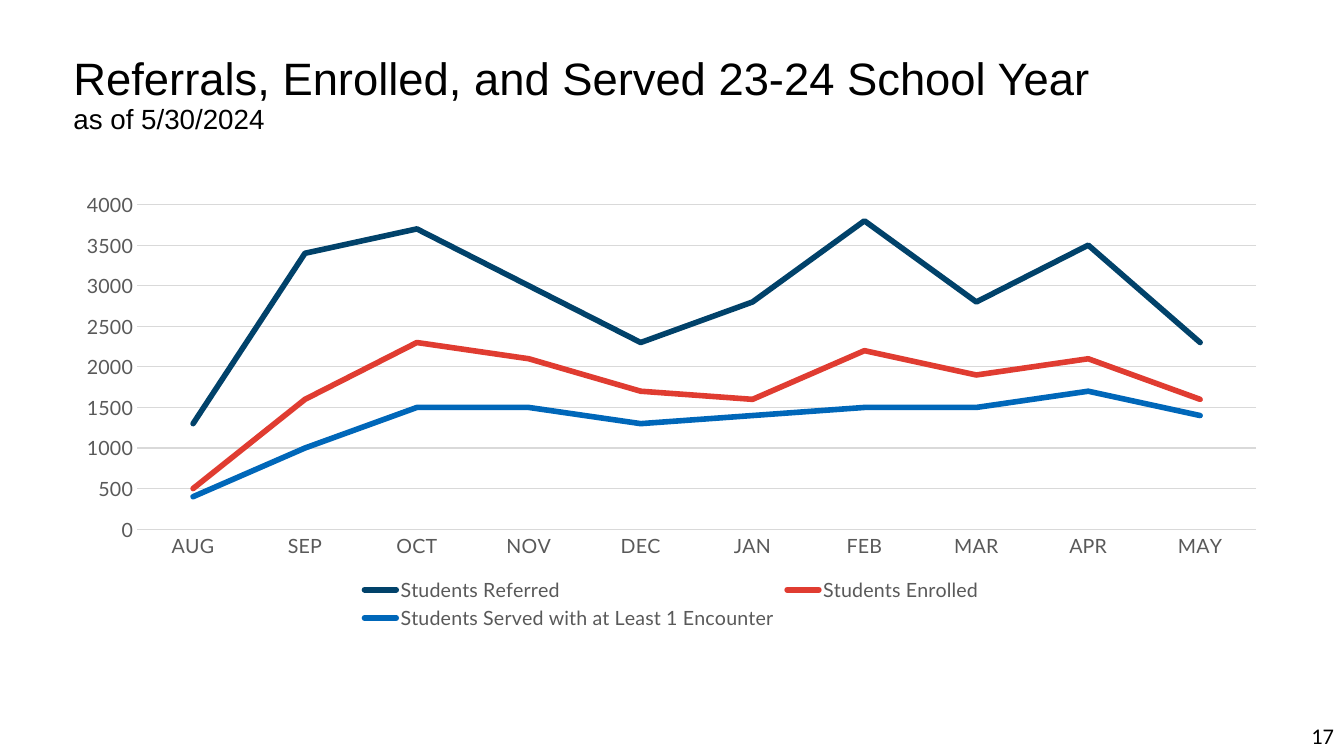
from pptx import Presentation
from pptx.chart.data import CategoryChartData
from pptx.dml.color import RGBColor
from pptx.enum.chart import XL_CHART_TYPE, XL_LEGEND_POSITION, XL_TICK_MARK
from pptx.enum.text import MSO_ANCHOR, PP_ALIGN
from pptx.util import Inches, Pt

BLACK = RGBColor(0x00, 0x00, 0x00)
GRAY = RGBColor(0x59, 0x59, 0x59)
GRID = RGBColor(0xD9, 0xD9, 0xD9)
NAVY = RGBColor(0x01, 0x42, 0x6A)
RED = RGBColor(0xE0, 0x3C, 0x31)
BLUE = RGBColor(0x00, 0x67, 0xB9)

MONTHS = ["AUG", "SEP", "OCT", "NOV", "DEC", "JAN", "FEB", "MAR", "APR", "MAY"]
SERIES = [
    ("Students Referred", NAVY,
     [1300, 3400, 3700, 3000, 2300, 2800, 3800, 2800, 3500, 2300]),
    ("Students Enrolled", RED,
     [500, 1600, 2300, 2100, 1700, 1600, 2200, 1900, 2100, 1600]),
    ("Students Served with at Least 1 Encounter", BLUE,
     [400, 1000, 1500, 1500, 1300, 1400, 1500, 1500, 1700, 1400]),
]


def add_text(slide, lines, left, top, width, height, font="Arial",
             align=PP_ALIGN.LEFT, spacing=1.0):
    """Add one paragraph whose lines are (text, point size) pairs."""
    shape = slide.shapes.add_textbox(
        Inches(left), Inches(top), Inches(width), Inches(height))
    frame = shape.text_frame
    frame.word_wrap = True
    frame.vertical_anchor = MSO_ANCHOR.MIDDLE
    paragraph = frame.paragraphs[0]
    paragraph.alignment = align
    paragraph.line_spacing = spacing
    for index, (text, size) in enumerate(lines):
        if index:
            paragraph.add_line_break()
        run = paragraph.add_run()
        run.text = text
        run.font.name = font
        run.font.size = Pt(size)
        run.font.color.rgb = BLACK


def format_font(font, name, size, color):
    font.name = name
    font.size = Pt(size)
    font.color.rgb = color


presentation = Presentation()
presentation.slide_width = Inches(13.33)
presentation.slide_height = Inches(7.5)
slide = presentation.slides.add_slide(presentation.slide_layouts[6])

add_text(slide, [("Referrals, Enrolled, and Served 23-24 School Year", 32.4),
                 ("as of 5/30/2024", 19.8)],
         0.63, 0.48, 12.08, 0.94, spacing=0.9)
add_text(slide, [("17", 16)], 10.33, 7.1, 3, 0.4,
         font="Calibri", align=PP_ALIGN.RIGHT)

chart_data = CategoryChartData()
chart_data.categories = MONTHS
for name, color, values in SERIES:
    chart_data.add_series(name, values)
chart = slide.shapes.add_chart(
    XL_CHART_TYPE.LINE, Inches(0.62), Inches(1.82), Inches(12.08), Inches(4.47),
    chart_data).chart
chart.has_title = False
format_font(chart.font, "Calibri", 10, BLACK)

chart.has_legend = True
chart.legend.position = XL_LEGEND_POSITION.BOTTOM
chart.legend.include_in_layout = False
format_font(chart.legend.font, "Lato", 14, GRAY)

for axis in (chart.category_axis, chart.value_axis):
    axis.major_tick_mark = XL_TICK_MARK.NONE
    axis.minor_tick_mark = XL_TICK_MARK.NONE
    format_font(axis.tick_labels.font, "Lato", 14, GRAY)

chart.value_axis.minimum_scale = 0
chart.value_axis.maximum_scale = 4000
chart.value_axis.major_unit = 500
chart.value_axis.format.line.fill.background()
chart.value_axis.has_major_gridlines = True
for line in (chart.category_axis.format.line,
             chart.value_axis.major_gridlines.format.line):
    line.color.rgb = GRID
    line.width = Pt(0.75)

plot = chart.plots[0]
plot.vary_by_categories = False
for series, (name, color, values) in zip(plot.series, SERIES):
    series.smooth = False
    line = series.format.line
    line.color.rgb = color
    line.width = Pt(4)
    series.format.line.fill  # the outline now exists and can take round caps
    series._element.spPr.ln.set("cap", "rnd")

presentation.save("out.pptx")
